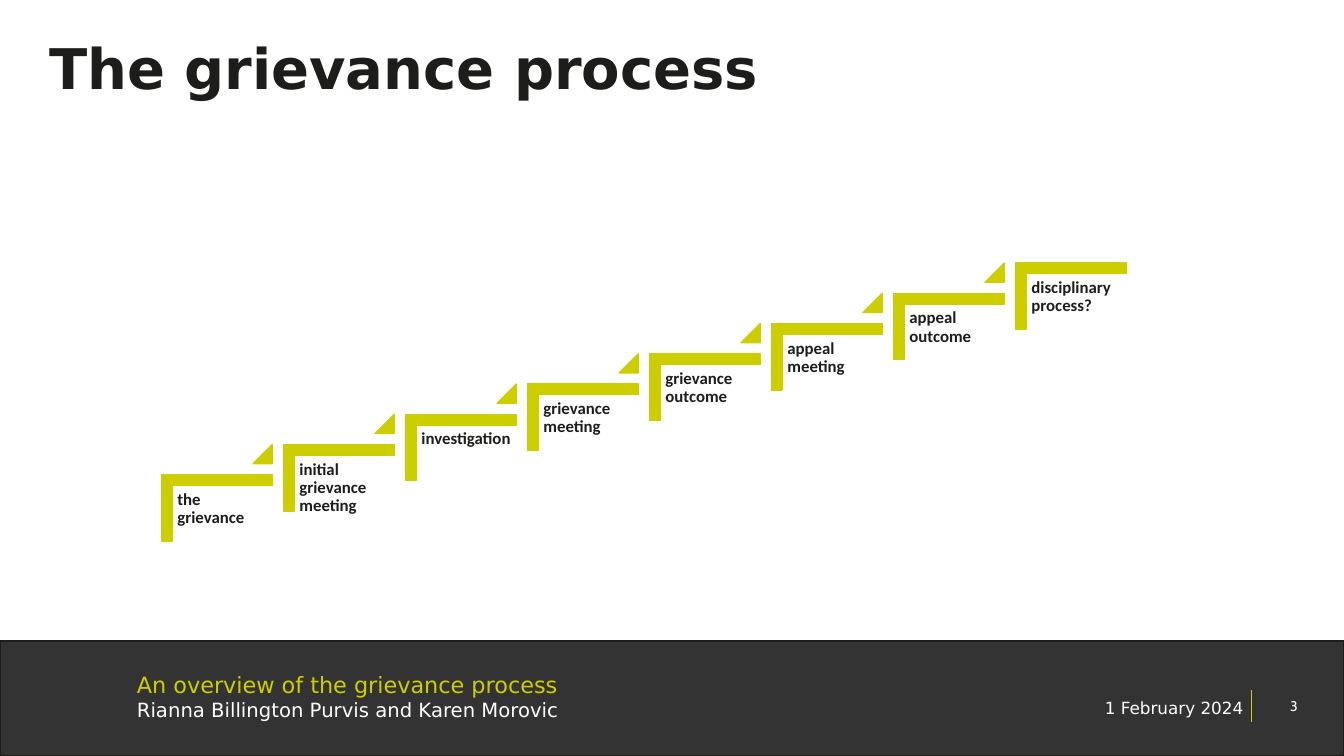
from lxml import etree
from pptx import Presentation
from pptx.dml.color import RGBColor
from pptx.enum.shapes import MSO_CONNECTOR, MSO_SHAPE
from pptx.enum.text import MSO_ANCHOR, MSO_AUTO_SIZE, PP_ALIGN
from pptx.oxml.ns import qn
from pptx.util import Inches, Pt

RECT, CORNER = MSO_SHAPE.RECTANGLE, MSO_SHAPE.CORNER
TRIANGLE, LINE = MSO_SHAPE.ISOSCELES_TRIANGLE, MSO_CONNECTOR.STRAIGHT
TOP, MIDDLE = MSO_ANCHOR.TOP, MSO_ANCHOR.MIDDLE
LEFT, RIGHT = PP_ALIGN.LEFT, PP_ALIGN.RIGHT
FIXED = MSO_AUTO_SIZE.NONE

WIDE, HIGH = 13.33, 7.5
LIME, INK, WHITE, BLACK = "CDCE00", "1D1D1B", "FFFFFF", "000000"
SANS = "DejaVu Sans"
STEPS = ["the grievance", "initial grievance meeting", "investigation",
         "grievance meeting", "grievance outcome", "appeal meeting",
         "appeal outcome", "disciplinary process?"]


def color(code):
    """Turn a hex string into a colour."""
    return RGBColor.from_string(code)


def style(font, size, code, name=SANS, bold=False):
    """Set the look of a font."""
    font.size, font.name, font.bold = Pt(size), name, bold
    font.color.rgb = color(code)


def shape(slide, kind, box, fill, line):
    """Add a flat preset shape in a box."""
    item = slide.shapes.add_shape(kind, *map(Inches, box))
    item.shadow.inherit = False
    item.fill.solid()
    item.fill.fore_color.rgb = color(fill)
    item.line.color.rgb = color(line)
    item.line.width = Pt(1)
    return item


def label(slide, box, text="", size=12, code=WHITE, name=SANS, bold=False,
          anchor=TOP, align=LEFT, space=1, inset=None):
    """Add a wrapped text box and return its paragraph."""
    frame = slide.shapes.add_textbox(*map(Inches, box)).text_frame
    frame.word_wrap = True
    frame.vertical_anchor = anchor
    if inset is not None:
        frame.margin_left = frame.margin_right = Inches(inset)
        frame.margin_top = frame.margin_bottom = Inches(inset)
    para = frame.paragraphs[0]
    para.text = text
    para.alignment, para.line_spacing = align, space
    style(para.font, size, code, name, bold)
    return para


def heading(slide, box, text):
    """Place and format the title."""
    title = slide.shapes.title
    title.left, title.top, title.width, title.height = map(Inches, box)
    frame = title.text_frame
    frame.text = text
    frame.auto_size = FIXED
    frame.vertical_anchor = TOP
    para = frame.paragraphs[0]
    para.alignment = LEFT
    style(para.font, 40, INK, bold=True)


def stairs(slide, box, names):
    """Draw rising steps, the first at the lower left of the box."""
    left, top, width, height = box
    wide, high = 1.1, 0.66
    run = (width - wide) / (len(names) - 1)
    rise = (height - high) / (len(names) - 1)
    for i, name in enumerate(names):
        x, y = left + run * i, top + height - high - rise * i
        gap = (wide - high) / 2
        step = shape(slide, CORNER, (x + gap, y - gap, high, wide), LIME, LIME)
        step.rotation = 90
        step.adjustments[0] = step.adjustments[1] = 0.161
        label(slide, (x + 0.11, y + 0.11, 0.99, 0.87), name, 12, INK,
              "Calibri", True, space=0.9, inset=0.05)
        if i < len(names) - 1:
            mark = shape(slide, TRIANGLE, (x + 0.91, y - rise, 0.19, 0.19),
                         LIME, LIME)
            mark.adjustments[0] = 1


def footer(slide, box):
    """Draw the dark band with talk, speakers, date and page."""
    left, top, width, _ = box
    band = shape(slide, RECT, box, BLACK, INK)
    tint = band.fill._xPr.find(qn("a:solidFill"))[0]
    etree.SubElement(tint, qn("a:alpha"), val="80000")
    end = left + width - 0.92
    rule = slide.shapes.add_connector(
        LINE, *map(Inches, (end, top + 0.49, end, top + 0.8)))
    rule.line.color.rgb = color(LIME)
    rule.line.width = Pt(0.5)
    etree.SubElement(rule._element.spPr, qn("a:effectLst"))
    para = label(slide, (left + 1.26, top + 0.22, 6, 0.65), anchor=MIDDLE)
    talk = para.add_run()
    talk.text = "An overview of the grievance process"
    style(talk.font, 16, LIME)
    para.add_line_break()
    names = para.add_run()
    names.text = "Rianna Billington Purvis and Karen Morovic"
    style(names.font, 14, WHITE)
    label(slide, (end - 1.55, top + 0.51, 1.66, 0.3), "1 February 2024")
    label(slide, (end + 0.01, top + 0.54, 0.55, 0.23), "3", 10, WHITE,
          "Cabin", anchor=MIDDLE, align=RIGHT, space=0.8)


def main():
    """Build and save the slide."""
    deck = Presentation()
    deck.slide_width, deck.slide_height = Inches(WIDE), Inches(HIGH)
    slide = deck.slides.add_slide(deck.slide_layouts[5])
    footer(slide, (0, 6.36, WIDE, HIGH - 6.36))
    stairs(slide, (1.6, 2.61, 9.57, 2.76), STEPS)
    heading(slide, (0.39, 0.28, 10.17, 0.77), "The grievance process")
    deck.save("out.pptx")


if __name__ == "__main__":
    main()
